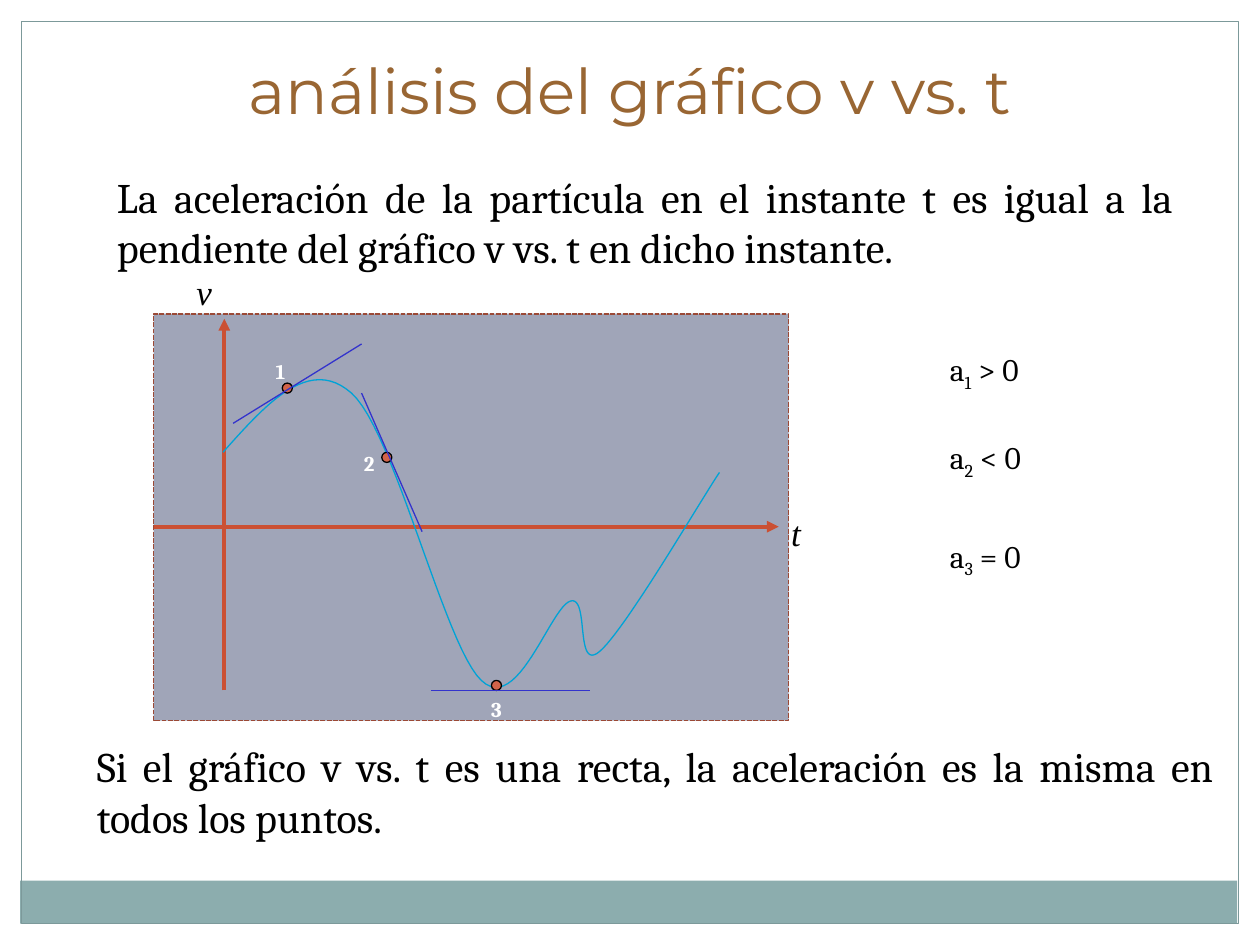
from lxml.etree import SubElement
from pptx import Presentation
from pptx.dml.color import RGBColor
from pptx.enum.dml import MSO_LINE_DASH_STYLE as DASH
from pptx.enum.shapes import MSO_CONNECTOR_TYPE as CONNECTOR, MSO_SHAPE as SHAPE
from pptx.enum.text import PP_ALIGN as ALIGN
from pptx.oxml.ns import qn
from pptx.util import Inches, Pt

presentation = Presentation()
presentation.slide_width, presentation.slide_height = Inches(10), Inches(7.5)
slide = presentation.slides.add_slide(presentation.slide_layouts[6])
shapes = slide.shapes
color = RGBColor.from_string


def add_text(box, text, size, font="Cambria", hex_color="000000", align=ALIGN.LEFT, wrap=True):
    """Add a text box; a pair of underscores in the text encloses a subscript."""
    frame = shapes.add_textbox(*map(Inches, box)).text_frame
    frame.word_wrap = wrap
    paragraph = frame.paragraphs[0]
    paragraph.alignment = align
    paragraph.font.size, paragraph.font.name = Pt(size), font
    paragraph.font.color.rgb = color(hex_color)
    for index, part in enumerate(text.split("_")):
        run = paragraph.add_run()
        run.text = part
        if index % 2:
            run._r.get_or_add_rPr().set("baseline", "-25000")
    return paragraph


def add_line(start, end, hex_color, width, arrow=False):
    line = shapes.add_connector(CONNECTOR.STRAIGHT, *map(Inches, start + end))
    line.line.color.rgb, line.line.width = color(hex_color), Pt(width)
    if arrow:
        SubElement(line.line._get_or_add_ln(), qn("a:tailEnd"), type="triangle")
    SubElement(line._element.spPr, qn("a:effectLst"))


# Page frame, footer band and graph panel: box, fill, line, line width, dash
panels = [
    ((0.16, 6.99, 9.66, 0.34), "8CADAE", None, 0, None),
    ((0.17, 0.17, 9.66, 7.16), None, "7C999A", 0.75, None),
    ((1.22, 2.49, 5.04, 3.23), "A0A5B8", "9B4936", 0.9, DASH.SQUARE_DOT),
]
for box, fill, outline, width, dash in panels:
    panel = shapes.add_shape(SHAPE.RECTANGLE, *map(Inches, box))
    panel.shadow.inherit = False
    if fill:
        panel.fill.solid()
        panel.fill.fore_color.rgb = color(fill)
    else:
        panel.fill.background()
    if outline:
        panel.line.color.rgb, panel.line.width = color(outline), Pt(width)
        panel.line.dash_style = dash
    else:
        panel.line.fill.background()

# Title and statements
add_text((0.73, 0.36, 8.54, 0.95), "análisis del gráfico v vs. t", 36,
         "Montserrat", "996633", ALIGN.CENTER, wrap=False)
add_text((0.83, 1.31, 8.58, 0.91),
         "La aceleración de la partícula en el instante t es igual a la "
         "pendiente del gráfico v vs. t en dicho instante.", 24, align=ALIGN.JUSTIFY)
add_text((0.67, 5.83, 9.06, 0.91),
         "Si el gráfico v vs. t es una recta, la aceleración es la misma en "
         "todos los puntos.", 24, align=ALIGN.JUSTIFY)

# Axes and their names
add_line((1.22, 4.18), (6.18, 4.18), "CB5033", 2.25, arrow=True)
add_line((1.78, 5.48), (1.78, 2.53), "CB5033", 2.25, arrow=True)
for name, left, top in [("v", 1.46, 2.1), ("t", 6.18, 4.01)]:
    add_text((left, top, 0.71, 0.43), name, 20, "Times New Roman").font.italic = True

# Velocity curve: Bézier segments, each sampled at equal steps
curve_start = (1.77, 3.59)
segments = [
    ((2.11, 3.21), (2.45, 2.82), (2.79, 3.12)),
    ((3.13, 3.42), (3.53, 5.13), (3.82, 5.4)),
    ((4.11, 5.68), (4.37, 4.81), (4.53, 4.77)),
    ((4.68, 4.73), (4.56, 5.34), (4.76, 5.17)),
    ((4.96, 5), (5.55, 3.99), (5.71, 3.75)),
]
steps = 24
curve_points = []
start = curve_start
for control_1, control_2, end in segments:
    for step in range(1, steps + 1):
        u = step / steps
        curve_points.append(tuple(
            Inches((1 - u) ** 3 * a + 3 * (1 - u) ** 2 * u * b + 3 * (1 - u) * u ** 2 * c + u ** 3 * d)
            for a, b, c, d in zip(start, control_1, control_2, end)))
    start = end
builder = shapes.build_freeform(*map(Inches, curve_start))
builder.add_line_segments(curve_points, close=False)
curve = builder.convert_to_shape()
curve.shadow.inherit = False
curve.fill.background()
curve.line.color.rgb, curve.line.width = color("00A3D6"), Pt(0.75)

# Marked points: dot, tangent ends, label corner
marks = [
    ("1", (2.24, 3.04), (1.85, 3.36), (2.87, 2.73), (2.09, 2.8)),
    ("2", (3.03, 3.59), (2.87, 3.12), (3.35, 4.22), (2.79, 3.53)),
    ("3", (3.9, 5.4), (3.42, 5.48), (4.68, 5.48), (3.8, 5.48)),
]
for label, dot_corner, tangent_start, tangent_end, label_corner in marks:
    dot = shapes.add_shape(SHAPE.OVAL, *map(Inches, dot_corner + (0.08, 0.08)))
    dot.shadow.inherit = False
    dot.fill.solid()
    dot.fill.fore_color.rgb = color("D16349")
    dot.line.color.rgb, dot.line.width = color("000000"), Pt(0.75)
    add_line(tangent_start, tangent_end, "3333CC", 0.75)
    add_text(label_corner + (0.63, 0.3), label, 12, hex_color="FFFFFF").font.bold = True

# Sign of the acceleration at each point
for text, top in [("a_1_ > 0", 2.73), ("a_2_ < 0", 3.43), ("a_3_ = 0", 4.21)]:
    add_text((7.44, top, 0.87, 0.4), text, 18)

presentation.save("out.pptx")
